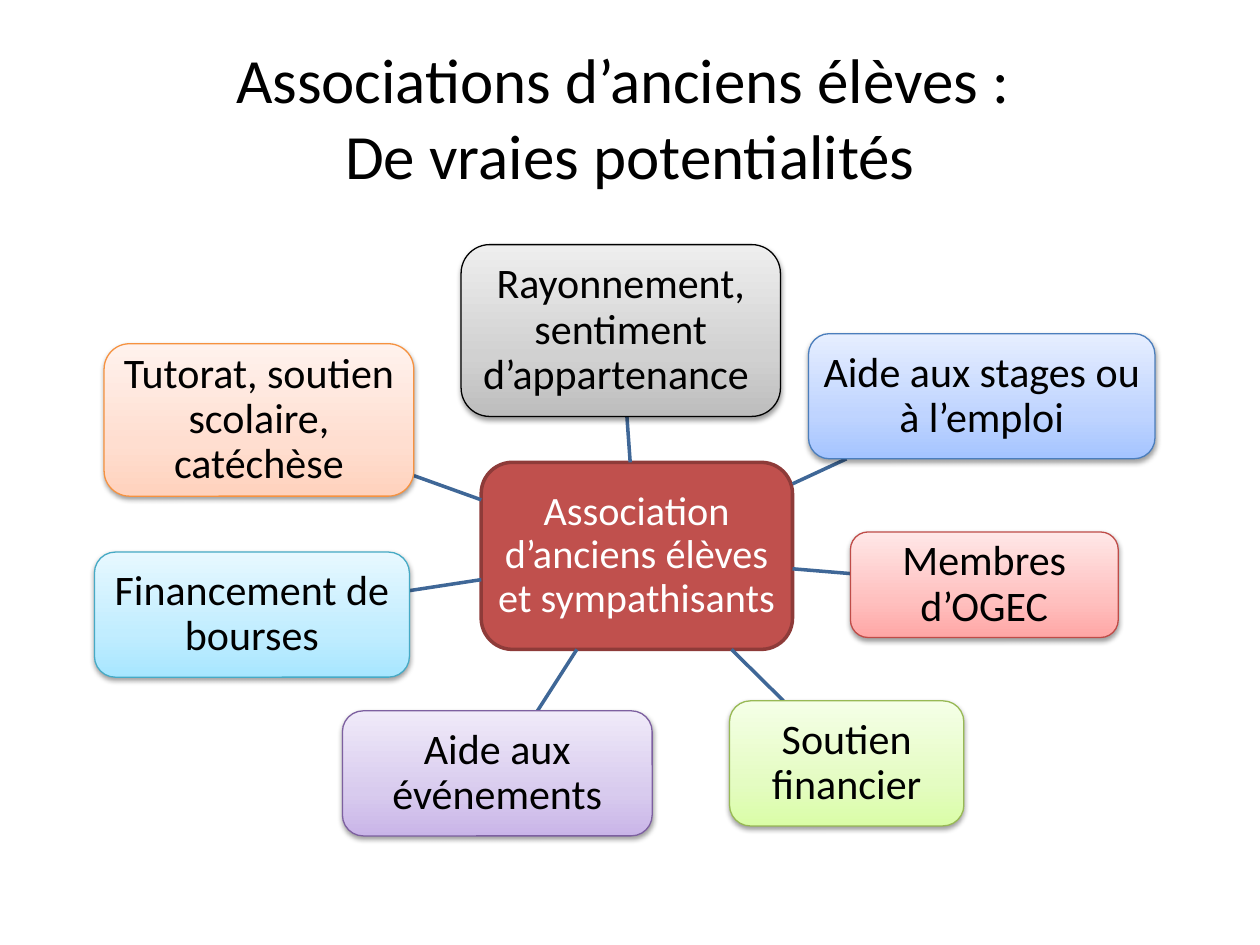
"""Build a hub-and-spoke slide on the potential of alumni associations."""
from collections import namedtuple
from copy import deepcopy

from lxml import etree
from pptx import Presentation
from pptx.dml.color import RGBColor
from pptx.enum.shapes import MSO_CONNECTOR, MSO_SHAPE
from pptx.enum.text import MSO_ANCHOR, PP_ALIGN
from pptx.oxml.ns import qn
from pptx.util import Pt

ROUNDED = MSO_SHAPE.ROUNDED_RECTANGLE
STRAIGHT = MSO_CONNECTOR.STRAIGHT
MIDDLE = MSO_ANCHOR.MIDDLE
CENTER = PP_ALIGN.CENTER

FONT = "Calibri"
STOP_POSITIONS = (0, 0.35, 1)
COLORS = {
    "black": "000000",
    "white": "FFFFFF",
    "hub": "C0504D",
    "hub_line": "8E3B39",
    "spoke": "3F6797",
}
THEMES = {
    "green": ("98B955", "DAFDA7", "E4FCC2", "F5FFE7"),
    "purple": ("7D60A0", "C9B5E8", "D8CBEE", "F0EAF9"),
    "red": ("BF4C48", "FFA6A5", "FFC0BF", "FFE7E7"),
    "blue": ("4B7EBC", "A4C4FF", "BFD4FF", "E6EEFF"),
    "cyan": ("46AAC5", "A7E6FF", "C1EDFF", "E7F8FF"),
    "grey": ("000000", "BDBDBD", "D1D1D1", "EEEEEE"),
    "orange": ("F69240", "FFD2BD", "FFDED0", "FFF2ED"),
}

Box = namedtuple("Box", "left top width height")
HUB = Box(275, 264.2, 177.9, 106.9)
TOPICS = [
    ("Soutien financier", "green", Box(416.9, 400.5, 133.9, 71.5)),
    ("Aide aux événements", "purple", Box(195.7, 406.2, 177, 71.5)),
    ("Membres d’OGEC", "red", Box(486, 304, 153, 60.3)),
    ("Aide aux stages ou à l’emploi", "blue", Box(462, 190.7, 198, 71.5)),
    ("Financement de bourses", "cyan", Box(54, 315.5, 180, 71.5)),
    ("Rayonnement, sentiment d’appartenance ", "grey",
     Box(263.5, 139.8, 182.5, 98.2)),
    ("Tutorat, soutien scolaire, catéchèse", "orange",
     Box(59.5, 196.4, 177, 87.1)),
]


def rgb(value):
    """Return the colour for a hex string."""
    return RGBColor.from_string(value)


def write_text(shape, text, size, color, inset, spacing=1):
    """Fill a shape with centred text."""
    frame = shape.text_frame
    frame.word_wrap = True
    frame.vertical_anchor = MIDDLE
    frame.margin_left = frame.margin_right = Pt(inset)
    frame.margin_top = frame.margin_bottom = Pt(inset)
    frame.text = text
    paragraph = frame.paragraphs[0]
    paragraph.alignment = CENTER
    paragraph.line_spacing = spacing
    paragraph.font.name = FONT
    paragraph.font.size = Pt(size)
    paragraph.font.color.rgb = rgb(color)


def add_title(slide, text):
    """Add the slide title."""
    title = slide.shapes.add_textbox(Pt(36), Pt(21.6), Pt(648), Pt(90))
    write_text(title, text, 36, COLORS["black"], 5)


def add_box(slide, box, line_color, line_width):
    """Add an outlined rounded box without a shadow."""
    shape = slide.shapes.add_shape(ROUNDED, *map(Pt, box))
    shape.shadow.inherit = False
    shape.line.color.rgb = rgb(line_color)
    shape.line.width = Pt(line_width)
    return shape


def add_hub(slide, text):
    """Add the central box."""
    shape = add_box(slide, HUB, COLORS["hub_line"], 2)
    shape.fill.solid()
    shape.fill.fore_color.rgb = rgb(COLORS["hub"])
    write_text(shape, text, 23, COLORS["white"], 4.2, 0.9)


def fill_gradient(shape, colors):
    """Fill a shape with a three-stop gradient rising from its bottom edge."""
    fill = shape.fill
    fill.gradient()
    fill.gradient_angle = 90
    stop_list = shape._element.spPr.find(".//" + qn("a:gsLst"))
    stop_list.append(deepcopy(stop_list[0]))
    for stop, position, color in zip(fill.gradient_stops, STOP_POSITIONS, colors):
        stop.position = position
        stop.color.rgb = rgb(color)


def add_shadow(shape):
    """Give a shape a soft shadow below it."""
    effects = shape._element.spPr.find(qn("a:effectLst"))
    shadow = etree.SubElement(
        effects, qn("a:outerShdw"), blurRad=str(Pt(3.1)), dist=str(Pt(1.6)),
        dir="5400000", rotWithShape="0")
    color = etree.SubElement(shadow, qn("a:srgbClr"), val=COLORS["black"])
    etree.SubElement(color, qn("a:alpha"), val="38000")


def add_topic(slide, text, theme, box):
    """Add one shaded topic box."""
    line_color, *stop_colors = THEMES[theme]
    shape = add_box(slide, box, line_color, 0.75)
    fill_gradient(shape, stop_colors)
    add_shadow(shape)
    write_text(shape, text, 24, COLORS["black"], 4.8, 0.9)


def center_of(box):
    """Return the centre point of a box."""
    return box.left + box.width / 2, box.top + box.height / 2


def edge_point(box, target):
    """Return where the line between two box centres leaves the first box."""
    x, y = center_of(box)
    target_x, target_y = center_of(target)
    dx, dy = target_x - x, target_y - y
    scale = 1 / max(abs(dx) * 2 / box.width, abs(dy) * 2 / box.height)
    return x + dx * scale, y + dy * scale


def add_spoke(slide, box):
    """Join the hub to a topic box."""
    ends = edge_point(HUB, box) + edge_point(box, HUB)
    connector = slide.shapes.add_connector(STRAIGHT, *map(Pt, ends))
    connector.line.color.rgb = rgb(COLORS["spoke"])
    connector.line.width = Pt(2)
    etree.SubElement(connector._element.spPr, qn("a:effectLst"))


def main():
    """Build and save the presentation."""
    presentation = Presentation()
    presentation.slide_width = Pt(720)
    presentation.slide_height = Pt(540)
    slide = presentation.slides.add_slide(presentation.slide_layouts[6])
    add_title(slide, "Associations d’anciens élèves : \vDe vraies potentialités")
    add_hub(slide, "Association d’anciens élèves et sympathisants")
    for text, theme, box in TOPICS:
        add_spoke(slide, box)
        add_topic(slide, text, theme, box)
    presentation.save("out.pptx")


if __name__ == "__main__":
    main()
